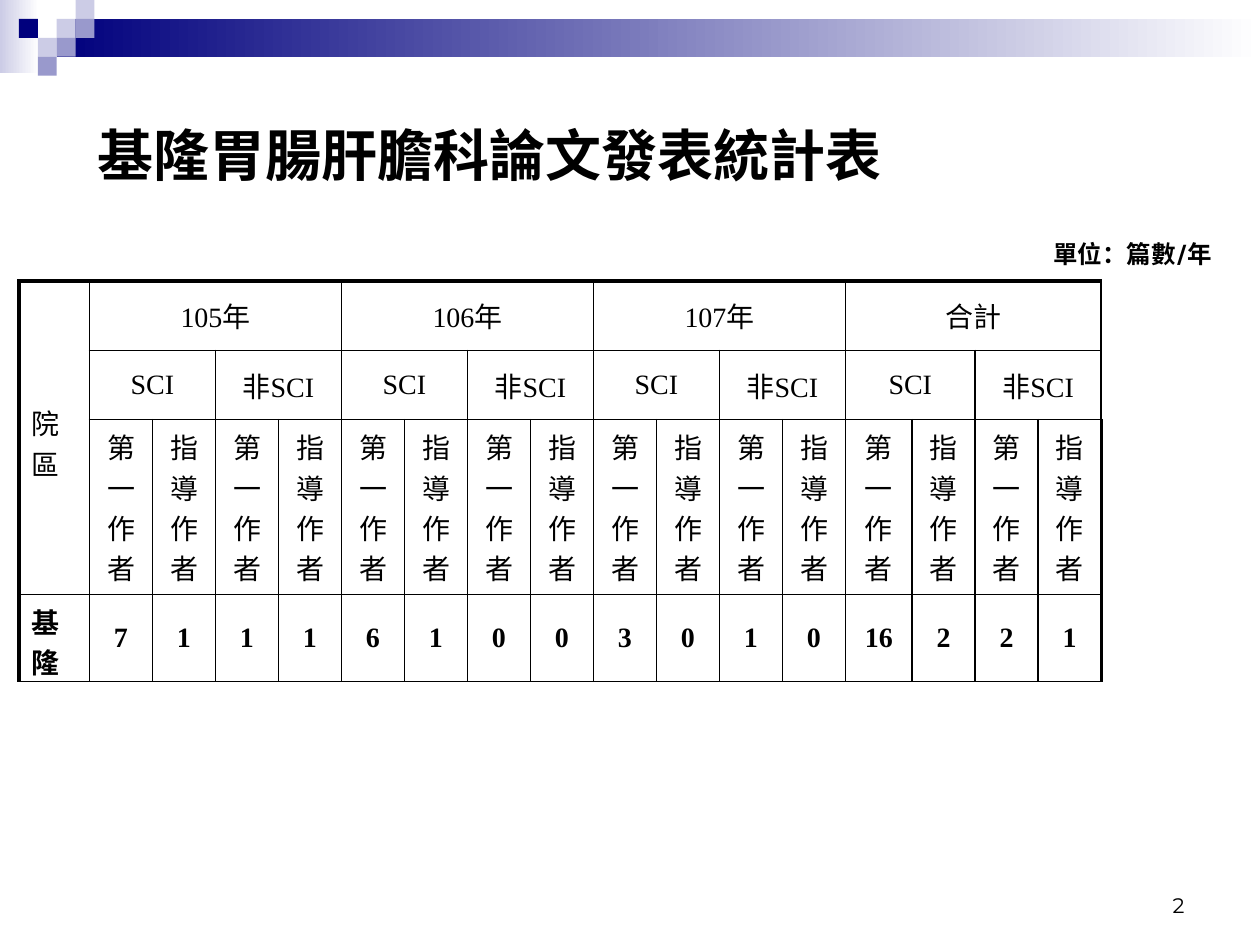
from dataclasses import dataclass

from lxml import etree
from pptx import Presentation
from pptx import util as u
from pptx.dml.color import RGBColor
from pptx.enum import shapes, text
from pptx.oxml.ns import qn

PX = 9144  # EMU; 100 px to the inch


@dataclass(frozen=True)
class Theme:
    ink: str = "000000"
    navy: str = "00007D"
    violet: str = "9999CC"
    lilac: str = "CCCCE6"
    white: str = "FFFFFF"
    heading_font: str = "Arial"
    unit_font: str = "Karla"
    number_font: str = "Montserrat"
    table_font: str = "Times New Roman"
    heading_size: int = 32
    table_size: int = 16
    unit_size: int = 14
    number_size: int = 12
    thin: float = 1
    thick: float = 2.25


class SlideBuilder:
    def __init__(self, slide, theme):
        self.slide = slide
        self.theme = theme

    def add_words(self, frame, words, font, size, bold=False, align=text.PP_ALIGN.LEFT):
        paragraph = frame.paragraphs[0]
        paragraph.alignment = align
        paragraph.space_before = u.Pt(0)
        run = paragraph.add_run()
        run.text = words
        run.font.name = font
        run.font.size = u.Pt(size)
        run.font.bold = bold
        run.font.color.rgb = RGBColor.from_string(self.theme.ink)

    def rectangle(self, left, top, width, height, *colours):
        """Draw a plain rectangle; two colours make a left-to-right gradient."""
        shape = self.slide.shapes.add_shape(
            shapes.MSO_SHAPE.RECTANGLE, left * PX, top * PX, width * PX, height * PX)
        shape.shadow.inherit = False
        shape.line.fill.background()
        if len(colours) == 1:
            shape.fill.solid()
            shape.fill.fore_color.rgb = RGBColor.from_string(colours[0])
            return
        shape.fill.gradient()
        shape.fill.gradient_angle = 0
        for stop, colour in zip(shape.fill.gradient_stops, colours):
            stop.color.rgb = RGBColor.from_string(colour)

    def title(self, left, top, width, height, words):
        shape = self.slide.shapes.title
        shape.left, shape.top = left * PX, top * PX
        shape.width, shape.height = width * PX, height * PX
        shape.text_frame.vertical_anchor = text.MSO_ANCHOR.MIDDLE
        self.add_words(shape.text_frame, words, self.theme.heading_font,
                       self.theme.heading_size, bold=True)

    def text_box(self, left, top, width, height, words, font, size, bold=False,
                 align=text.PP_ALIGN.LEFT, anchor=text.MSO_ANCHOR.TOP):
        shape = self.slide.shapes.add_textbox(
            left * PX, top * PX, width * PX, height * PX)
        shape.text_frame.word_wrap = True
        shape.text_frame.vertical_anchor = anchor
        self.add_words(shape.text_frame, words, font, size, bold, align)

    def border(self, cell, side, width):
        properties = cell._tc.get_or_add_tcPr()
        line = etree.SubElement(properties, qn(f"a:ln{side}"), w=str(u.Pt(width)))
        fill = etree.SubElement(line, qn("a:solidFill"))
        etree.SubElement(fill, qn("a:srgbClr"), val=self.theme.ink)

    def table(self, left, top, widths, heights):
        """Add an unfilled grid with a heavy left, top and right edge."""
        table = self.slide.shapes.add_table(
            len(heights), len(widths), left * PX, top * PX,
            sum(widths) * PX, sum(heights) * PX).table
        table.first_row = table.horz_banding = False
        for column, width in zip(table.columns, widths):
            column.width = width * PX
        for row, height in zip(table.rows, heights):
            row.height = height * PX
        for r in range(len(heights)):
            for c in range(len(widths)):
                cell = table.cell(r, c)
                heavy = {"L": c == 0, "R": c == len(widths) - 1, "T": r == 0, "B": False}
                for side, is_heavy in heavy.items():
                    self.border(cell, side, self.theme.thick if is_heavy else self.theme.thin)
                cell.fill.background()
        return table

    def cell(self, table, row, column, words, rows=1, columns=1, bold=False,
             align=text.PP_ALIGN.CENTER):
        cell = table.cell(row, column)
        if rows * columns > 1:
            cell.merge(table.cell(row + rows - 1, column + columns - 1))
        cell.vertical_anchor = text.MSO_ANCHOR.MIDDLE
        self.add_words(cell.text_frame, words, self.theme.table_font,
                       self.theme.table_size, bold, align)
        return cell


def draw_banner(builder):
    theme = builder.theme
    step = 15
    builder.rectangle(0, 0, 31, 58, theme.lilac, theme.white)
    builder.rectangle(45, 15, 955, 30, theme.navy, theme.white)
    squares = [(3, 1, theme.lilac), (4, 0, theme.lilac), (4, 1, theme.violet),
               (2, 2, theme.lilac), (1, 1, theme.navy), (3, 2, theme.violet),
               (2, 3, theme.violet)]
    for column, row, colour in squares:
        builder.rectangle(column * step, row * step, step, step, colour)


def draw_papers_table(builder):
    periods = {"105年": (7, 1, 1, 1), "106年": (6, 1, 0, 0),
               "107年": (3, 0, 1, 0), "合計": (16, 2, 2, 1)}
    indexes = ("SCI", "非SCI")
    roles = ("第一作者", "指導作者")
    per_period = len(indexes) * len(roles)

    widths = [56] + [50] * (per_period * len(periods))
    widths[13] = 53
    table = builder.table(15, 223, widths, [55, 55, 139, 69])
    left = text.PP_ALIGN.LEFT
    campus = builder.cell(table, 0, 0, "院區", rows=3, align=left)
    campus.margin_top = 13 * PX
    builder.cell(table, 3, 0, "基隆", bold=True, align=left)
    for p, (period, counts) in enumerate(periods.items()):
        first = 1 + p * per_period
        builder.cell(table, 0, first, period, columns=per_period)
        for i, index in enumerate(indexes):
            builder.cell(table, 1, first + i * len(roles), index, columns=len(roles))
        for offset, count in enumerate(counts):
            builder.cell(table, 2, first + offset, roles[offset % len(roles)])
            builder.cell(table, 3, first + offset, str(count), bold=True)


def main():
    presentation = Presentation()
    presentation.slide_width = 1000 * PX
    presentation.slide_height = 750 * PX
    slide = presentation.slides.add_slide(presentation.slide_layouts[5])
    theme = Theme()
    builder = SlideBuilder(slide, theme)

    draw_banner(builder)
    builder.text_box(717, 683, 233, 50, "2", theme.number_font, theme.number_size,
                     align=text.PP_ALIGN.RIGHT, anchor=text.MSO_ANCHOR.BOTTOM)
    builder.text_box(826, 185, 167, 33, "單位：篇數/年", theme.unit_font,
                     theme.unit_size, bold=True)
    builder.title(67, 86, 708, 73, "基隆胃腸肝膽科論文發表統計表")
    draw_papers_table(builder)
    presentation.save("out.pptx")


if __name__ == "__main__":
    main()
